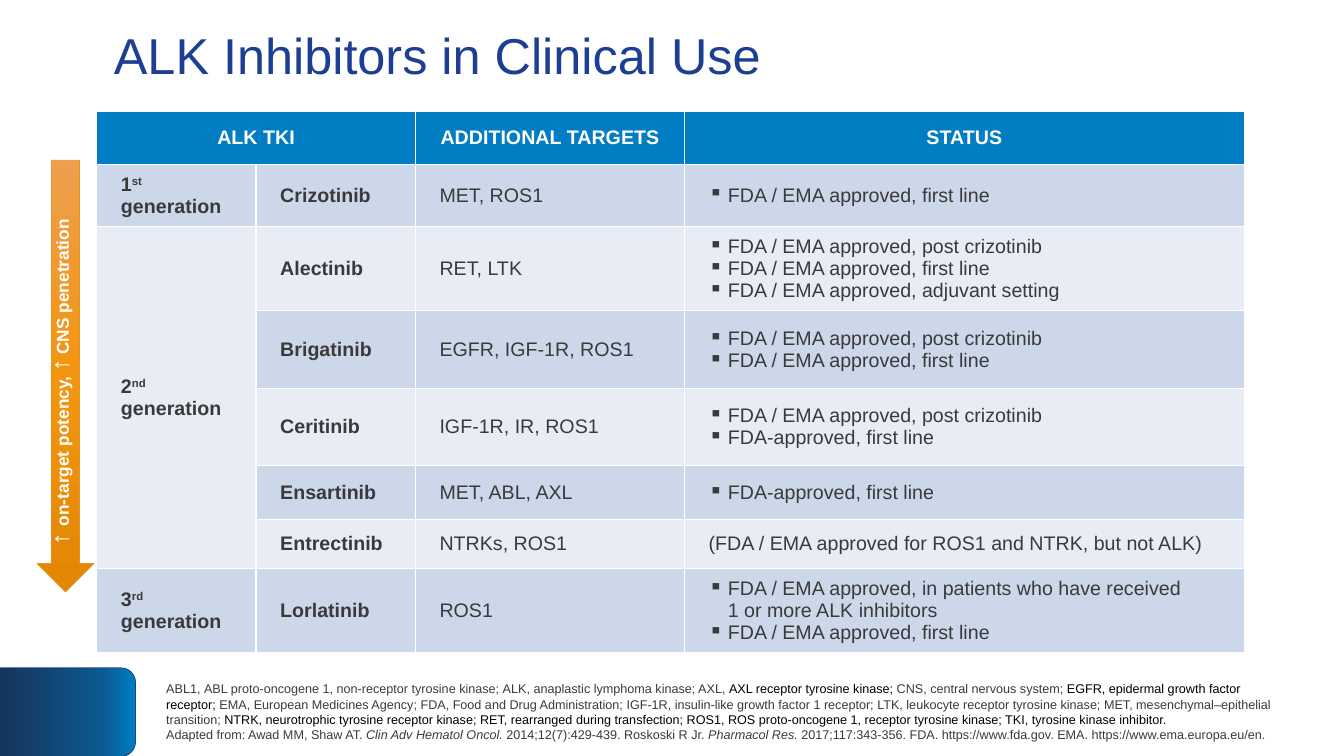
from lxml import etree
from pptx import Presentation
from pptx.dml.color import RGBColor
from pptx.enum.shapes import MSO_SHAPE as Preset
from pptx.enum.text import MSO_ANCHOR as Anchor, MSO_AUTO_SIZE as AutoSize, PP_ALIGN as Align
from pptx.oxml import parse_xml
from pptx.oxml.ns import nsdecls, qn
from pptx.util import Inches, Pt

# Content
FONT = "Arial"
COLORS = {
    "title": "1C3F93", "header": "007DC3", "dark": "CCD7E9", "light": "E7ECF5",
    "text": "3A3A3A", "soft": "3D3D3D", "black": "000000", "white": "FFFFFF",
    "arrow_line": "E8931A",
}
ARROW_STOPS = [(0, "ED9F4E"), (50, "F29510"), (100, "E38603")]
TAB_STOPS = [(0, "007DC3"), (25, "0B598F"), (100, "15345A")]
TITLE = "ALK Inhibitors in Clinical Use"
HEADERS = {0: "ALK TKI", 2: "ADDITIONAL TARGETS", 3: "STATUS"}
POST = "FDA / EMA approved, post crizotinib"
FIRST = "FDA / EMA approved, first line"
FDA_FIRST = "FDA-approved, first line"

# Generation (number, ordinal ending) -> drugs: name, targets, status (a list is bulleted)
GENERATIONS = [
    (("1", "st"), [("Crizotinib", "MET, ROS1", [FIRST])]),
    (("2", "nd"), [
        ("Alectinib", "RET, LTK", [POST, FIRST, "FDA / EMA approved, adjuvant setting"]),
        ("Brigatinib", "EGFR, IGF-1R, ROS1", [POST, FIRST]),
        ("Ceritinib", "IGF-1R, IR, ROS1", [POST, FDA_FIRST]),
        ("Ensartinib", "MET, ABL, AXL", [FDA_FIRST]),
        ("Entrectinib", "NTRKs, ROS1",
         "(FDA / EMA approved for ROS1 and NTRK, but not ALK)"),
    ]),
    (("3", "rd"), [("Lorlatinib", "ROS1", [
        "FDA / EMA approved, in patients who have received\v1 or more ALK inhibitors",
        FIRST])]),
]
COLUMN_WIDTHS = [1.58, 1.58, 2.67, 5.55]
ROW_HEIGHTS = [0.52, 0.6, 0.77, 0.77, 0.77, 0.53, 0.49, 0.71]
ARROW_LABEL = [("↑ ", 17.6), ("on-target potency, ", 12.3), ("↑", 17.6),
               (" CNS penetration", 12.3)]

# Footnote lines as (text, color, italic)
FOOTNOTE = [
    [("ABL1, ", "text", False),
     ("ABL proto-oncogene 1, non-receptor tyrosine kinase; ", "soft", False),
     ("ALK, anaplastic lymphoma kinase; AXL, ", "text", False),
     ("AXL receptor tyrosine kinase; ", "black", False),
     ("CNS, central nervous system; ", "text", False),
     ("EGFR, epidermal growth factor receptor; ", "black", False),
     ("EMA, European Medicines Agency; FDA, Food and Drug Administration; IGF-1R, "
      "insulin-like growth factor 1 receptor; LTK, leukocyte receptor tyrosine kinase; "
      "MET, mesenchymal–epithelial transition; ", "text", False),
     ("NTRK, neurotrophic tyrosine receptor kinase; RET, rearranged during transfection; "
      "ROS1, ROS proto-oncogene 1, receptor tyrosine kinase; TKI, tyrosine kinase "
      "inhibitor.", "black", False)],
    [("Adapted from: Awad MM, Shaw AT. ", "text", False),
     ("Clin Adv Hematol Oncol. ", "text", True),
     ("2014;12(7):429-439. Roskoski R Jr. ", "text", False),
     ("Pharmacol Res. ", "text", True),
     ("2017;117:343-356. FDA. https://www.fda.gov. EMA. https://www.ema.europa.eu/en.",
      "text", False)],
]


def rgb(name):
    return RGBColor.from_string(COLORS[name])


def style(font, size, color, bold=False, italic=False):
    font.name, font.size, font.bold, font.italic = FONT, Pt(size), bold, italic
    font.color.rgb = rgb(color)


def add_gradient_shape(shapes, preset, place, stops, line):
    shape = shapes.add_shape(preset, *map(Inches, place))
    shape.shadow.inherit = False
    shape.line.color.rgb, shape.line.width = rgb(line), Pt(0.5)
    marks = "".join(f'<a:gs pos="{pos * 1000}"><a:srgbClr val="{color}"/></a:gs>'
                    for pos, color in stops)
    gradient = parse_xml(f'<a:gradFill {nsdecls("a")} rotWithShape="1"><a:gsLst>{marks}'
                         '</a:gsLst><a:lin ang="5400000" scaled="0"/></a:gradFill>')
    shape._element.spPr.find(qn("a:prstGeom")).addnext(gradient)
    return shape


def format_cell(cell, fill):
    cell.vertical_anchor = Anchor.MIDDLE
    cell.margin_left = cell.margin_right = Inches(0.24)
    cell.margin_top = cell.margin_bottom = Inches(0.09)
    cell.fill.solid()
    cell.fill.fore_color.rgb = rgb(fill)
    for index, side in enumerate(("lnL", "lnR", "lnT", "lnB")):
        cell._tc.tcPr.insert(index, parse_xml(
            f'<a:{side} {nsdecls("a")} w="12700"><a:solidFill>'
            f'<a:srgbClr val="{COLORS["white"]}"/></a:solidFill></a:{side}>'))


def write_cell(cell, content, color="text", bold=False):
    bulleted = isinstance(content, list)
    for index, text in enumerate(content if bulleted else [content]):
        frame = cell.text_frame
        para = frame.paragraphs[0] if index == 0 else frame.add_paragraph()
        para.text = text
        if bulleted:
            props = para._p.get_or_add_pPr()
            props.set("marL", str(Inches(0.19)))
            props.set("indent", str(-Inches(0.19)))
            etree.SubElement(props, qn("a:buChar")).set("char", "▪")
        style(para.font, 14, color, bold)


deck = Presentation()
deck.slide_width, deck.slide_height = Inches(13.33), Inches(7.5)
page = deck.slides.add_slide(deck.slide_layouts[5])

# Corner tab
tab = add_gradient_shape(page.shapes, Preset.ROUND_2_SAME_RECTANGLE,
                         (0.23, 6.39, 0.88, 1.35), TAB_STOPS, "title")
tab.rotation = 90

# Title
title = page.shapes.title
title.left, title.top, title.width, title.height = map(Inches, (0.92, 0.18, 11.5, 0.8))
title.text_frame.text = TITLE
title.text_frame.vertical_anchor = Anchor.MIDDLE
title.text_frame.margin_left = Inches(0.21)
para = title.text_frame.paragraphs[0]
para.alignment, para.line_spacing = Align.LEFT, 0.9
style(para.font, 36, "title")

# Table
table = page.shapes.add_table(len(ROW_HEIGHTS), len(COLUMN_WIDTHS), Inches(0.96),
                              Inches(1.11), Inches(sum(COLUMN_WIDTHS)),
                              Inches(sum(ROW_HEIGHTS))).table
for column, width in zip(table.columns, COLUMN_WIDTHS):
    column.width = Inches(width)
for index, height in enumerate(ROW_HEIGHTS):
    table.rows[index].height = Inches(height)
    fill = "header" if index == 0 else "dark" if index % 2 else "light"
    for cell in table.rows[index].cells:
        format_cell(cell, fill)

table.cell(0, 0).merge(table.cell(0, 1))
for column, header in HEADERS.items():
    cell = table.cell(0, column)
    write_cell(cell, header, "white", bold=True)
    cell.text_frame.paragraphs[0].alignment = Align.CENTER

row = 1
for (number, ending), drugs in GENERATIONS:
    generation = table.cell(row, 0)
    if len(drugs) > 1:
        generation.merge(table.cell(row + len(drugs) - 1, 0))
    para = generation.text_frame.paragraphs[0]
    style(para.font, 14, "text", bold=True)
    for text in (number, ending, " generation"):
        span = para.add_run()
        span.text = text
        if text == ending:
            span.font._element.set("baseline", "30000")
    for name, targets, status in drugs:
        write_cell(table.cell(row, 1), name, bold=True)
        write_cell(table.cell(row, 2), targets)
        write_cell(table.cell(row, 3), status)
        row += 1

# Potency arrow with its upright label
group = page.shapes.add_group_shape()
add_gradient_shape(group.shapes, Preset.DOWN_ARROW, (0.37, 1.59, 0.56, 4.28),
                   ARROW_STOPS, "arrow_line")
label = group.shapes.add_textbox(*map(Inches, (0.39, 2.15, 0.5, 3.36))).text_frame
label.word_wrap, label.auto_size = False, AutoSize.SHAPE_TO_FIT_TEXT
label._txBody.bodyPr.set("vert", "vert270")
for text, size in ARROW_LABEL:
    span = label.paragraphs[0].add_run()
    span.text = text
    style(span.font, size, "white", bold=True)

# Footnote
note = page.shapes.add_textbox(*map(Inches, (1.55, 6.62, 11.18, 0.88))).text_frame
note.word_wrap, note.vertical_anchor = True, Anchor.MIDDLE
para = note.paragraphs[0]
for index, line in enumerate(FOOTNOTE):
    if index:
        para.add_line_break()
    for text, color, italic in line:
        span = para.add_run()
        span.text = text
        style(span.font, 9, color, italic=italic)

deck.save("out.pptx")
